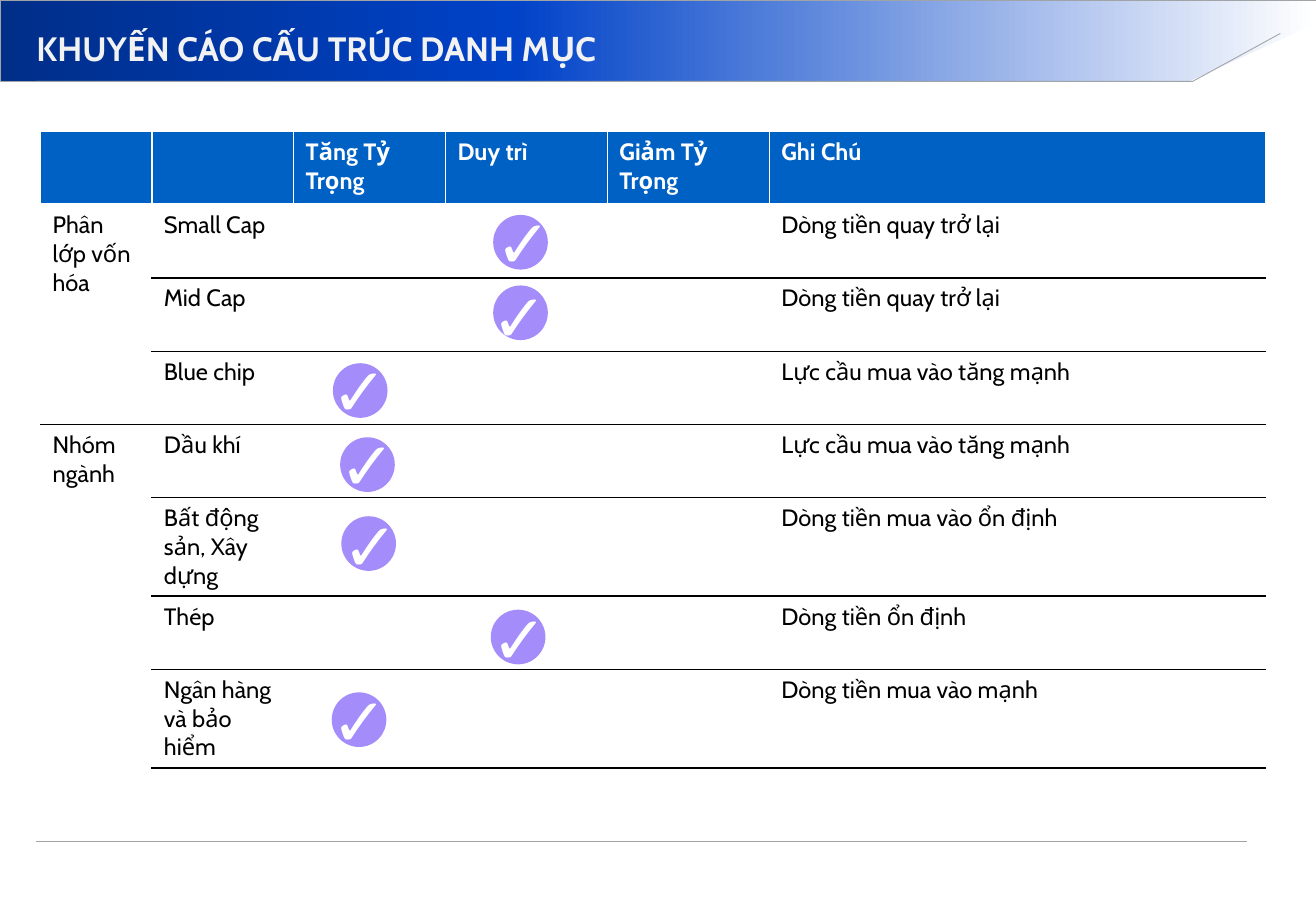
from typing import NamedTuple

from lxml.etree import SubElement
from pptx import Presentation
from pptx.dml.color import RGBColor
from pptx.enum.shapes import MSO_CONNECTOR, MSO_SHAPE
from pptx.enum.text import MSO_ANCHOR, MSO_AUTO_SIZE, PP_ALIGN
from pptx.oxml import parse_xml
from pptx.oxml.ns import nsdecls, qn
from pptx.util import Pt

WHITE = RGBColor(0xFF, 0xFF, 0xFF)
BLACK = RGBColor(0x00, 0x00, 0x00)
TITLE_GREY = RGBColor(0xF2, 0xF2, 0xF2)
RULE_GREY = RGBColor(0xA0, 0xA4, 0xA7)
HEADER_BLUE = RGBColor(0x00, 0x61, 0xC4)
BADGE_PURPLE = RGBColor(0xA4, 0x8C, 0xFA)
BANNER_DARK = RGBColor(0x00, 0x2E, 0x89)
BANNER_BLUE = RGBColor(0x00, 0x42, 0xC8)

BADGE_SIZE = 32.4
TICK_WIDTH, TICK_HEIGHT = 54.72, 55.44


class Recommendation(NamedTuple):
    sector: str
    note: str
    height: float
    badge: tuple[float, float]
    tick: tuple[float, float]


class Group(NamedTuple):
    label: str
    first_row: int
    last_row: int


HEADERS = ["", "", "Tăng Tỷ Trọng", "Duy trì", "Giảm Tỷ Trọng", "Ghi Chú"]
COLUMN_WIDTHS = [66, 84, 90, 96, 96, 294]
ROW_HEIGHT, TALL_ROW_HEIGHT = 43.4, 58.4
GROUPS = [Group("Phân lớp vốn hóa", 1, 3), Group("Nhóm ngành", 4, 7)]
RECOMMENDATIONS = [
    Recommendation("Small Cap", "Dòng tiền quay trở lại", ROW_HEIGHT, (292.3, 127.4), (283, 115.2)),
    Recommendation("Mid Cap", "Dòng tiền quay trở lại", ROW_HEIGHT, (292.3, 169.2), (280.8, 159.1)),
    Recommendation("Blue chip", "Lực cầu mua vào tăng mạnh", ROW_HEIGHT, (197.3, 215.3), (185.8, 203)),
    Recommendation("Dầu khí", "Lực cầu mua vào tăng mạnh", ROW_HEIGHT, (201.6, 259.2), (190.8, 247)),
    Recommendation("Bất động sản, Xây dựng", "Dòng tiền mua vào ổn định", TALL_ROW_HEIGHT,
                   (202.3, 306), (192.2, 295.2)),
    Recommendation("Thép", "Dòng tiền ổn định", ROW_HEIGHT, (290.9, 361.4), (280.8, 349.9)),
    Recommendation("Ngân hàng và bảo hiểm", "Dòng tiền mua vào mạnh", TALL_ROW_HEIGHT,
                   (196.6, 410.4), (185.8, 398.9)),
]


def add_run(paragraph, text: str, size: float, color: RGBColor, font: str = "Cabin",
            bold: bool = False) -> None:
    run = paragraph.add_run()
    run.text = text
    run.font.name = font
    run.font.size = Pt(size)
    run.font.bold = bold
    run.font.color.rgb = color


def set_rule(line) -> None:
    line.color.rgb = RULE_GREY
    line.width = Pt(0.5)


def set_border(cell, index: int, side: str, color: RGBColor, width: float) -> None:
    border = parse_xml(
        f'<a:{side} {nsdecls("a")} w="{Pt(width)}"><a:solidFill>'
        f'<a:srgbClr val="{color}"/></a:solidFill></a:{side}>')
    cell._tc.get_or_add_tcPr().insert(index, border)


def bottom_color(row: int, column: int) -> RGBColor:
    first_group = GROUPS[0].first_row <= row <= GROUPS[0].last_row
    return BLACK if row > 0 and (column > 0 or first_group) else WHITE


def draw_banner(slide) -> None:
    banner = slide.shapes.add_shape(MSO_SHAPE.RECTANGLE, 0, 0, Pt(780), Pt(48.24))
    banner.shadow.inherit = False
    set_rule(banner.line)
    banner.fill.gradient()
    banner.fill.gradient_angle = 0
    stops = banner.element.spPr.find(qn("a:gradFill")).find(qn("a:gsLst"))
    for stop in list(stops):
        stops.remove(stop)
    for percent, color in [(0, BANNER_DARK), (39, BANNER_BLUE), (100, WHITE)]:
        stop = SubElement(stops, qn("a:gs"), pos=str(percent * 1000))
        SubElement(stop, qn("a:srgbClr"), val=str(color))

    # White corner cut and its outline
    corner = slide.shapes.add_shape(MSO_SHAPE.RIGHT_TRIANGLE, Pt(702), Pt(13.7), Pt(78.5), Pt(36))
    corner.shadow.inherit = False
    corner.rotation = 180
    corner.element.spPr.find(qn("a:xfrm")).set("flipV", "1")
    corner.fill.solid()
    corner.fill.fore_color.rgb = WHITE
    corner.line.fill.background()

    builder = slide.shapes.build_freeform(Pt(21.6), Pt(48.24))
    builder.add_line_segments([(Pt(707), Pt(48.24)), (Pt(758.9), Pt(19.8))], close=False)
    edge = builder.convert_to_shape()
    edge.shadow.inherit = False
    edge.fill.background()
    set_rule(edge.line)


def draw_footer_rule(slide) -> None:
    rule = slide.shapes.add_connector(MSO_CONNECTOR.STRAIGHT, Pt(21.6), Pt(499), Pt(739.4), Pt(499))
    set_rule(rule.line)
    SubElement(rule._element.spPr, qn("a:effectLst"))


def add_text(shapes, left: float, top: float, width: float, height: float, wrap: bool):
    frame = shapes.add_textbox(Pt(left), Pt(top), Pt(width), Pt(height)).text_frame
    frame.word_wrap = wrap
    frame.vertical_anchor = MSO_ANCHOR.MIDDLE
    return frame


def draw_title(slide) -> None:
    title = add_text(slide.shapes, 21.6, 13, 681.8, 31, True)
    title.margin_left = title.margin_right = title.margin_top = title.margin_bottom = 0
    add_run(title.paragraphs[0], "KHUYẾN CÁO CẤU TRÚC DANH MỤC", 20, TITLE_GREY, bold=True)


def draw_recommendation_table(slide) -> None:
    heights = [ROW_HEIGHT] + [item.height for item in RECOMMENDATIONS]
    table = slide.shapes.add_table(len(heights), len(HEADERS), Pt(24), Pt(78),
                                   Pt(sum(COLUMN_WIDTHS)), Pt(sum(heights))).table
    table.first_row = table.horz_banding = False
    for column, width in zip(table.columns, COLUMN_WIDTHS):
        column.width = Pt(width)
    for row, height in zip(table.rows, heights):
        row.height = Pt(height)

    labels = {group.first_row: group.label for group in GROUPS}
    contents = [HEADERS] + [[labels.get(row, ""), item.sector, "", "", "", item.note]
                            for row, item in enumerate(RECOMMENDATIONS, 1)]
    for row, texts in enumerate(contents):
        header = row == 0
        for column, text in enumerate(texts):
            cell = table.cell(row, column)
            if header:
                cell.fill.solid()
                cell.fill.fore_color.rgb = HEADER_BLUE
            else:
                cell.fill.background()
            borders = [("lnL", WHITE, 1), ("lnR", WHITE, 1),
                       ("lnT", bottom_color(row - 1, column), 1),
                       ("lnB", bottom_color(row, column), 3 if header else 1)]
            for index, (side, color, width) in enumerate(borders):
                set_border(cell, index, side, color, width)
            if text:
                add_run(cell.text_frame.paragraphs[0], text, 14, WHITE if header else BLACK, bold=header)
    for group in GROUPS:
        table.cell(group.first_row, 0).merge(table.cell(group.last_row, 0))


def draw_check(slide, item: Recommendation) -> None:
    check = slide.shapes.add_group_shape()
    badge = check.shapes.add_shape(MSO_SHAPE.OVAL, Pt(item.badge[0]), Pt(item.badge[1]),
                                   Pt(BADGE_SIZE), Pt(BADGE_SIZE))
    badge.shadow.inherit = False
    badge.fill.solid()
    badge.fill.fore_color.rgb = BADGE_PURPLE
    badge.line.fill.background()
    tick = add_text(check.shapes, *item.tick, TICK_WIDTH, TICK_HEIGHT, False)
    tick.auto_size = MSO_AUTO_SIZE.SHAPE_TO_FIT_TEXT
    tick.paragraphs[0].alignment = PP_ALIGN.CENTER
    add_run(tick.paragraphs[0], "✓", 40, WHITE, font="Arial")


def main() -> None:
    deck = Presentation()
    deck.slide_width, deck.slide_height = Pt(780), Pt(540)
    slide = deck.slides.add_slide(deck.slide_layouts[6])
    draw_banner(slide)
    draw_footer_rule(slide)
    draw_title(slide)
    draw_recommendation_table(slide)
    for item in RECOMMENDATIONS:
        draw_check(slide, item)
    deck.save("out.pptx")


if __name__ == "__main__":
    main()
